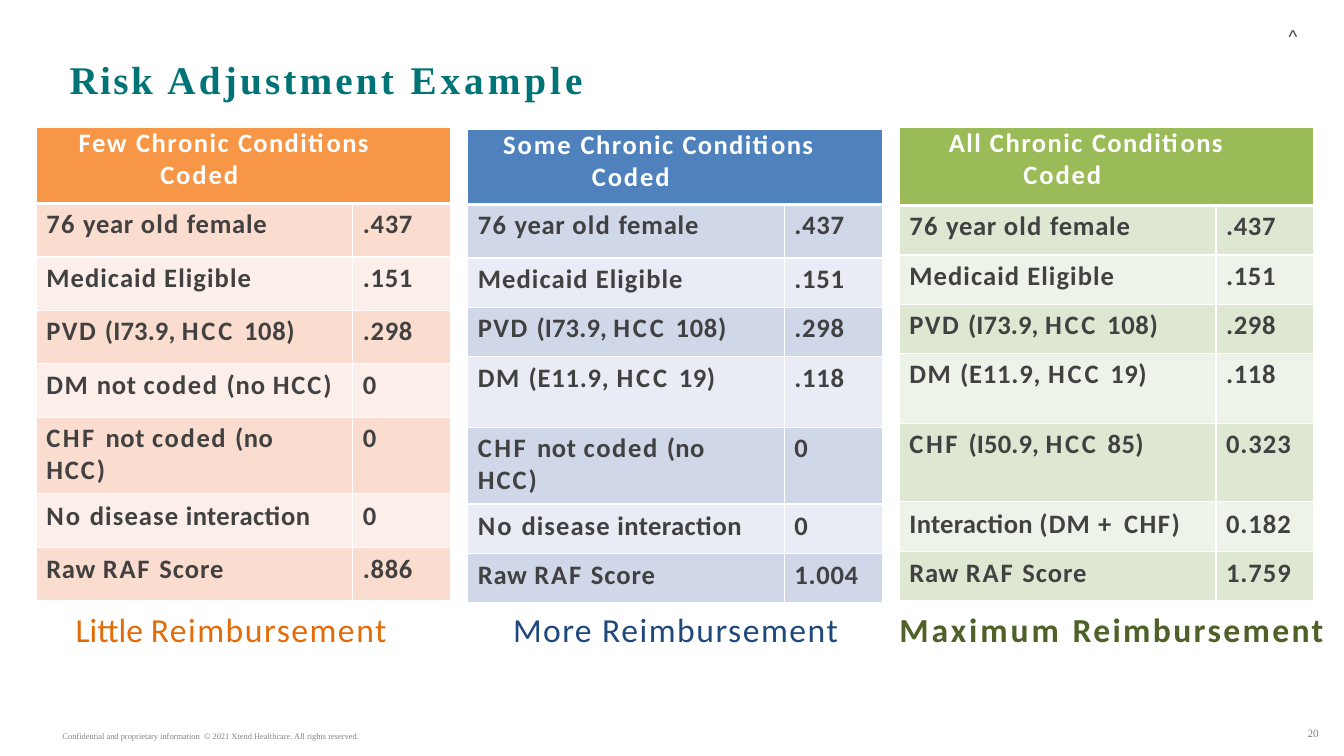
from lxml import etree
from pptx import Presentation
from pptx.dml.color import RGBColor
from pptx.enum import text as t
from pptx.oxml import ns
from pptx.util import Inches, Pt

WHITE = RGBColor(0xFF, 0xFF, 0xFF)
INK = RGBColor(0x41, 0x41, 0x41)
GREY = RGBColor(0x83, 0x83, 0x83)
TEAL = RGBColor(0x00, 0x73, 0x77)
ORANGE = RGBColor(0xF7, 0x96, 0x46)
ORANGE_MID = RGBColor(0xFB, 0xDD, 0xCF)
ORANGE_PALE = RGBColor(0xFC, 0xEE, 0xE9)
ORANGE_DARK = RGBColor(0xE3, 0x6C, 0x09)
BLUE = RGBColor(0x4F, 0x81, 0xBC)
BLUE_MID = RGBColor(0xD0, 0xD7, 0xE8)
BLUE_PALE = RGBColor(0xE9, 0xEC, 0xF4)
BLUE_DARK = RGBColor(0x1F, 0x48, 0x7C)
GREEN = RGBColor(0x9B, 0xBA, 0x58)
GREEN_MID = RGBColor(0xDE, 0xE7, 0xD1)
GREEN_PALE = RGBColor(0xEE, 0xF3, 0xEA)
GREEN_DARK = RGBColor(0x4F, 0x61, 0x28)


def add_spans(para, spans, font, size, color, bold=False):
    """Add (text, letter spacing in points) pairs as runs of one style."""
    for words, spacing in spans:
        span = para.add_run()
        span.text = words
        span.font.name = font
        span.font.size = Pt(size)
        span.font.bold = bold
        span.font.color.rgb = color
        if spacing:
            span.font._element.set("spc", str(round(spacing * 100)))


def format_cell(cell, fill, top=1, bottom=1):
    """Fill a cell and give it white borders, widths in points."""
    cell.margin_left = cell.margin_right = cell.margin_bottom = 0
    props = cell._tc.get_or_add_tcPr()
    for side, width in (("L", 1), ("R", 1), ("T", top), ("B", bottom)):
        line = etree.SubElement(props, ns.qn(f"a:ln{side}"), w=str(Pt(width)))
        solid = etree.SubElement(line, ns.qn("a:solidFill"))
        etree.SubElement(solid, ns.qn("a:srgbClr"), val=str(WHITE))
    cell.fill.solid()
    cell.fill.fore_color.rgb = fill


# Each label is a list of lines, each line a list of (text, spacing) pairs.
FEMALE = [[("76 ", 0.9), ("year ", 0.5), ("old ", 0.9), ("female", 0.6)]]
MEDICAID = [[("Medicaid Eligible", 0.8)]]
PVD = [[("PVD ", 1.1), ("(I73.9, ", 0.1), ("HCC ", 2), ("108)", 0.5)]]
DM_NOT_CODED = [[("DM ", 1.1), ("not ", 0.5), ("coded ", 1.2), ("(no ", 0.6), ("HCC)", 1.4)]]
DM = [[("DM ", 1.1), ("(E11.9, ", 0.6), ("HCC ", 2), ("19)", 0.4)]]
CHF_NOT_CODED = [[("CHF ", 1.8), ("not ", 0.5), ("coded ", 1.2), ("(no", 0.3)], [("HCC)", 1.4)]]
CHF = [[("CHF ", 1.8), ("(I50.9, ", 0.1), ("HCC ", 2), ("85)", 0.3)]]
NO_INTERACTION = [[("No ", 1.4), ("disease", 0.8), (" interaction", 0.3)]]
INTERACTION = [[("Interaction ", 0.2), ("(DM ", 0.8), ("+ ", 2.4), ("CHF)", 1.1)]]
RAW_SCORE = [[("Raw ", 0.5), ("RAF ", 1.3), ("Score", 0.7)]]
HEADING_END = [("Chronic ", 1.1), ("Conditions ", 1), ("Coded", 1.4)]

# left, top, first word and its spacing, hanging indent, fills, row heights,
# labels and values of the last four rows, spacing of values with a digit in front
SCENARIOS = [
    (0.36, 1.26, ("Few ", 1.2), -0.81, (ORANGE, ORANGE_MID, ORANGE_PALE),
     (0.76, 0.53, 0.53, 0.53, 0.53, 0.76, 0.53, 0.53),
     [(DM_NOT_CODED, "0"), (CHF_NOT_CODED, "0"), (NO_INTERACTION, "0"), (RAW_SCORE, ".886")], 0),
    (4.64, 1.28, ("Some ", 1.4), -0.88, (BLUE, BLUE_MID, BLUE_PALE),
     (0.75, 0.53, 0.49, 0.49, 0.7, 0.76, 0.49, 0.49),
     [(DM, ".118"), (CHF_NOT_CODED, "0"), (NO_INTERACTION, "0"), (RAW_SCORE, "1.004")], 0.5),
    (8.92, 1.26, ("All ", 1.1), -0.74, (GREEN, GREEN_MID, GREEN_PALE),
     (0.78, 0.49, 0.49, 0.49, 0.69, 0.78, 0.49, 0.49),
     [(DM, ".118"), (CHF, "0.323"), (INTERACTION, "0.182"), (RAW_SCORE, "1.759")], 0.7),
]
SHARED_ROWS = [(FEMALE, ".437"), (MEDICAID, ".151"), (PVD, ".298")]

deck = Presentation()
deck.slide_width = Inches(13.33)
deck.slide_height = Inches(7.5)
page = deck.slides.add_slide(deck.slide_layouts[5])

title = page.shapes.title
title.left, title.top = Inches(0.67), Inches(0.53)
title.width, title.height = Inches(12), Inches(0.49)
frame = title.text_frame
frame.auto_size = t.MSO_AUTO_SIZE.NONE
frame.vertical_anchor = t.MSO_ANCHOR.TOP
frame.margin_left = frame.margin_top = Inches(0.02)
frame.margin_right = frame.margin_bottom = 0
frame.paragraphs[0].alignment = t.PP_ALIGN.LEFT
add_spans(frame.paragraphs[0], [("Risk ", 1.7), ("Adjustment ", 2.3), ("Example", 2.9)],
          "Times New Roman", 28, TEAL, True)

for left, top, first_word, hanging, fills, heights, last_rows, digit_spacing in SCENARIOS:
    table = page.shapes.add_table(len(heights), 2, Inches(left), Inches(top),
                                  Inches(4.11), Inches(sum(heights))).table
    table.first_row = table.horz_banding = False
    table.columns[0].width = Inches(3.14)
    table.columns[1].width = Inches(0.97)
    for row, height in zip(table.rows, heights):
        row.height = Inches(height)

    heading = table.cell(0, 0)
    heading.merge(table.cell(0, 1))
    format_cell(heading, fills[0], bottom=3)
    heading.margin_top = 0
    para = heading.text_frame.paragraphs[0]
    props = para._p.get_or_add_pPr()
    props.set("marL", str(Inches(1.23)))
    props.set("marR", str(Inches(0.4)))
    props.set("indent", str(Inches(hanging)))
    add_spans(para, [first_word] + HEADING_END, "Calibri", 19, WHITE, True)

    for number, (label, value) in enumerate(SHARED_ROWS + last_rows, 1):
        value_spacing = 0 if value == "0" else 0.5 if value[0] == "." else digit_spacing
        for column, lines in enumerate((label, [[(value, value_spacing)]])):
            cell = table.cell(number, column)
            format_cell(cell, fills[2 - number % 2], top=3 if number == 1 else 1)
            cell.margin_left = Inches(0.1)
            cell.margin_top = Inches(0.05 if number < 6 else 0.06)
            for index, spans in enumerate(lines):
                frame = cell.text_frame
                para = frame.add_paragraph() if index else frame.paragraphs[0]
                add_spans(para, spans, "Calibri", 19, INK, True)

# left, top, width, height, runs, font, size, colour, bold
LABELS = [
    (0.73, 6.02, 3.27, 0.44, [("Little ", 0), ("Reimbursement", 1.1)], "Calibri", 24, ORANGE_DARK, False),
    (5.07, 6.02, 3.34, 0.44, [("More ", 1), ("Reimbursement", 1.1)], "Calibri", 24, BLUE_DARK, False),
    (8.9, 6.02, 4.31, 0.44, [("Maximum ", 2.1), ("Reimbursement", 1.7)], "Calibri", 24, GREEN_DARK, True),
    (12.76, 0.23, 0.14, 0.24, [("^", 0)], "Arial", 13.3, INK, False),
    (0.6, 7.23, 3.16, 0.17,
     [("Confidential and proprietary information\u00a0 © 2021 Xtend Healthcare. All rights reserved.".replace("\u00a0", " "), 0)],
     "Times New Roman", 6, GREY, False),
    (12.32, 7.19, 0.76, 0.24, [("20", 0)], "Times New Roman", 8, GREY, False),
]
for left, top, width, height, spans, *style in LABELS:
    box = page.shapes.add_textbox(Inches(left), Inches(top), Inches(width), Inches(height))
    frame = box.text_frame
    frame.word_wrap = True
    frame.margin_left = frame.margin_top = Inches(0.02)
    frame.margin_right = frame.margin_bottom = 0
    add_spans(frame.paragraphs[0], spans, *style)
# The last label is the page number.
frame.paragraphs[0].alignment = t.PP_ALIGN.RIGHT

deck.save("out.pptx")
